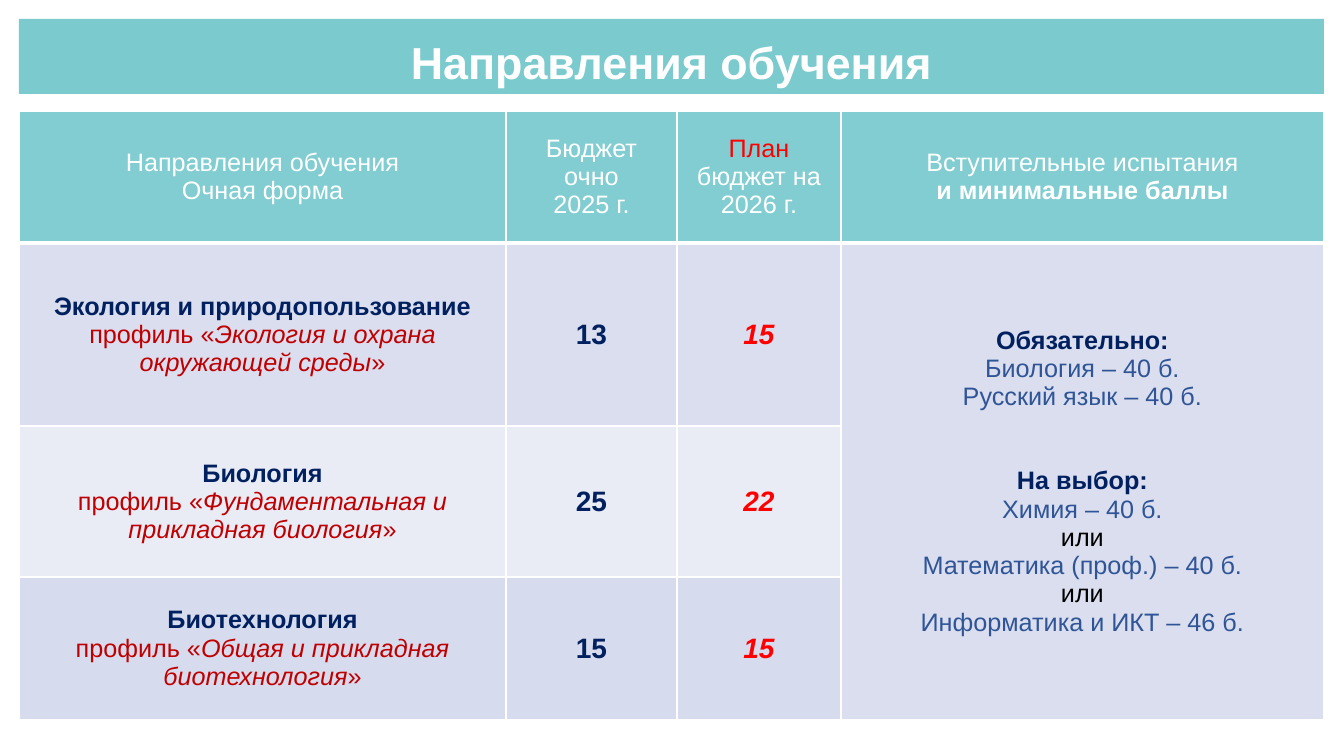
from lxml.etree import SubElement
from pptx import Presentation
from pptx.dml.color import RGBColor
from pptx.enum.shapes import MSO_SHAPE
from pptx.enum.text import MSO_ANCHOR, PP_ALIGN
from pptx.oxml import parse_xml
from pptx.oxml.ns import nsdecls, qn
from pptx.util import Pt

PX = 12192000 / 1344  # EMU in one px

COLORS = {
    "white": "FFFFFF", "teal": "4EB9BE", "lavender": "CFD5EA", "pale": "E9EBF5",
    "navy": "002060", "crimson": "C00000", "red": "FF0000", "blue": "2F5597", "black": "000000",
}

# Run styles: colour, size, bold, italic
STYLES = {
    "title": ("white", 32, True, False),
    "head": ("white", 18, False, False),
    "head bold": ("white", 18, True, False),
    "head red": ("red", 18, False, False),
    "name": ("navy", 18, True, False),
    "profile": ("crimson", 18, False, False),
    "profile name": ("crimson", 18, False, True),
    "places": ("navy", 20, True, False),
    "plan": ("red", 20, True, True),
    "exam": ("blue", 18, False, False),
    "or": ("black", 18, False, False),
}


def paint(fill, color, alpha=100):
    fill.solid()
    fill.fore_color.rgb = RGBColor.from_string(COLORS[color])
    if alpha < 100:
        tint = fill._xPr.find(qn("a:solidFill"))[0]
        SubElement(tint, qn("a:alpha")).set("val", str(alpha * 1000))


def write(frame, paragraphs):
    for index, runs in enumerate(paragraphs):
        para = frame.add_paragraph() if index else frame.paragraphs[0]
        para.alignment = PP_ALIGN.CENTER
        for text, style in runs:
            span = para.add_run()
            span.text = text
            color, size, bold, italic = STYLES[style]
            span.font.color.rgb = RGBColor.from_string(COLORS[color])
            look = {"name": "Arial", "size": Pt(size), "bold": bold, "italic": italic}
            for key, value in look.items():
                setattr(span.font, key, value)


deck = Presentation()
deck.slide_width, deck.slide_height = round(1344 * PX), round(756 * PX)
page = deck.slides.add_slide(deck.slide_layouts[6])

# Title bar
bar = page.shapes.add_shape(MSO_SHAPE.RECTANGLE, *[round(n * PX) for n in (19, 19, 1305, 75)])
bar.shadow.inherit = False
bar.line.fill.background()
paint(bar.fill, "teal", 75)

# Table content: rows of cells, cells of paragraphs, paragraphs of runs
header = [
    [[("Направления обучения", "head")], [("Очная форма", "head")]],
    [[("Бюджет очно", "head")], [("2025 г.", "head")]],
    [[("План", "head red")], [("бюджет на", "head")], [("2026 г.", "head")]],
    [[("Вступительные испытания", "head")], [("и минимальные баллы", "head bold")]],
]
programmes = [
    ("Экология и природопользование", ["Экология и охрана", "окружающей среды"], "13", "15"),
    ("Биология", ["Фундаментальная и прикладная биология"], "25", "22"),
    ("Биотехнология", ["Общая и прикладная биотехнология"], "15", "15"),
]
exams = [
    ("Обязательно:", "name"), ("Биология – 40 б.", "exam"), ("Русский язык – 40 б.", "exam"),
    ("На выбор:", "name"), ("Химия – 40 б.", "exam"), ("или", "or"),
    ("Математика (проф.) – 40 б.", "exam"), ("или", "or"), ("Информатика и ИКТ – 46 б.", "exam"),
]
rows = [header]
for name, profile, places, plan in programmes:
    lines = [[(line, "profile name")] for line in profile]
    lines[0].insert(0, ("профиль «", "profile"))
    lines[-1].append(("»", "profile"))
    rows.append([[[(name, "name")], *lines], [[(places, "places")]], [[(plan, "plan")]], []])
rows[1][3] = [[exam] for exam in exams]

# Table grid
widths, heights = [487, 171, 164, 483], [132, 183, 151, 143]
place = (19, 111, sum(widths), sum(heights))
table = page.shapes.add_table(4, 4, *[round(n * PX) for n in place]).table
table.horz_banding = False
for column, width in zip(table.columns, widths):
    column.width = round(width * PX)
for row, height in zip(table.rows, heights):
    row.height = round(height * PX)
table.cell(1, 3).merge(table.cell(3, 3))

# Cells: fill, white borders, text
fills = [("teal", 70), ("lavender", 77), ("pale", 100), ("lavender", 85)]
for r, row in enumerate(rows):
    for c, paragraphs in enumerate(row):
        cell = table.cell(r, c)
        cell.vertical_anchor = MSO_ANCHOR.MIDDLE
        paint(cell.fill, *fills[r])
        for position, side in enumerate("LRTB"):
            weight = Pt(3 if r == 0 and side == "B" else 1)
            border = parse_xml(
                f'<a:ln{side} {nsdecls("a")} w="{weight}"><a:solidFill>'
                f'<a:srgbClr val="{COLORS["white"]}"/></a:solidFill></a:ln{side}>')
            cell._tc.tcPr.insert(position, border)
        write(cell.text_frame, paragraphs)
table.cell(3, 0).margin_top = table.cell(3, 0).margin_bottom = 0
table.cell(3, 0).margin_left = table.cell(3, 0).margin_right = round(7 * PX)
table.cell(1, 3).text_frame.paragraphs[3].space_before = Pt(40)

# Title
box = page.shapes.add_textbox(*[round(n * PX) for n in (84, 0, 1175, 94)])
box.text_frame.word_wrap = True
box.text_frame.vertical_anchor = MSO_ANCHOR.BOTTOM
write(box.text_frame, [[("Направления обучения", "title")]])
box.text_frame.paragraphs[0].line_spacing = 0.9

deck.save("out.pptx")
